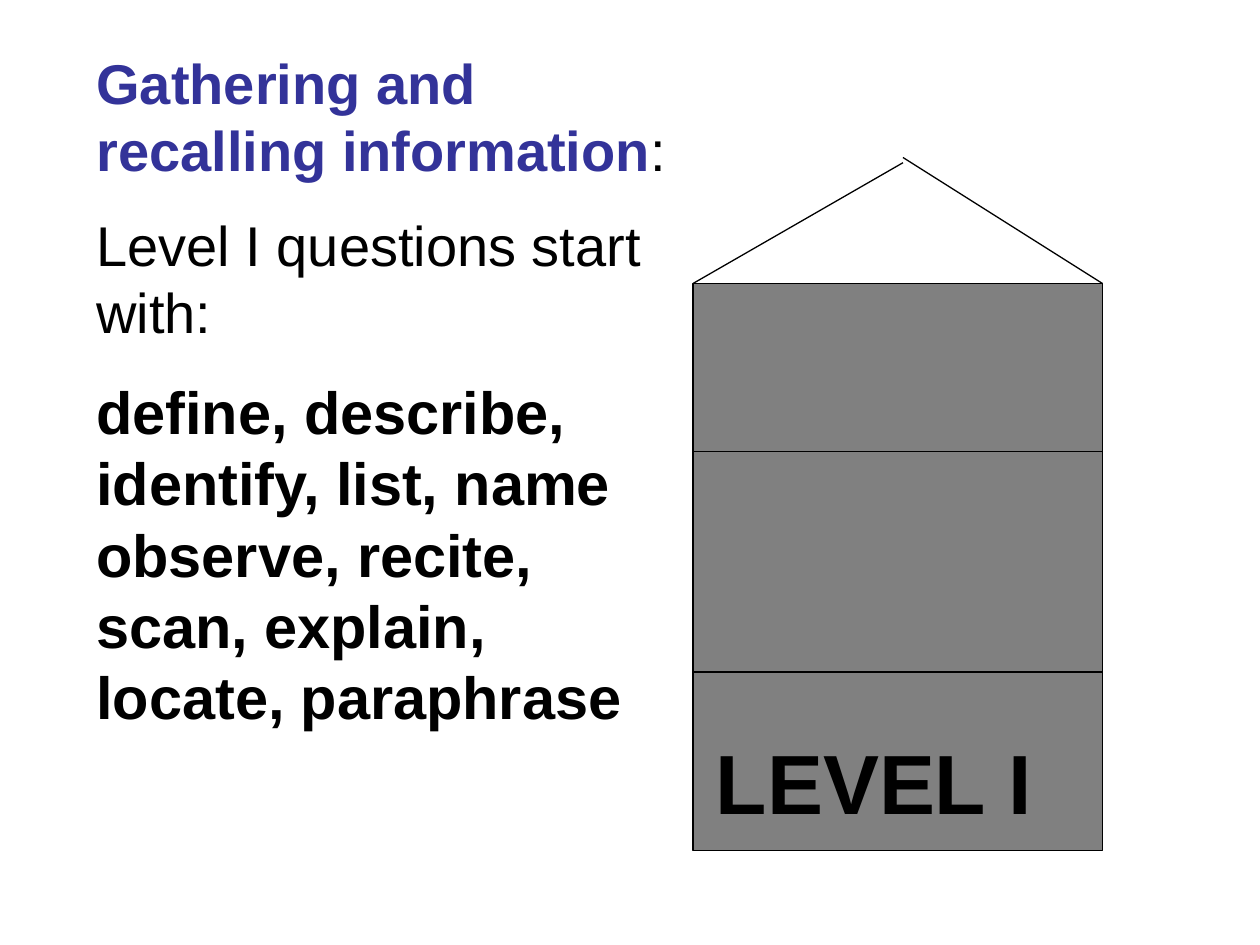
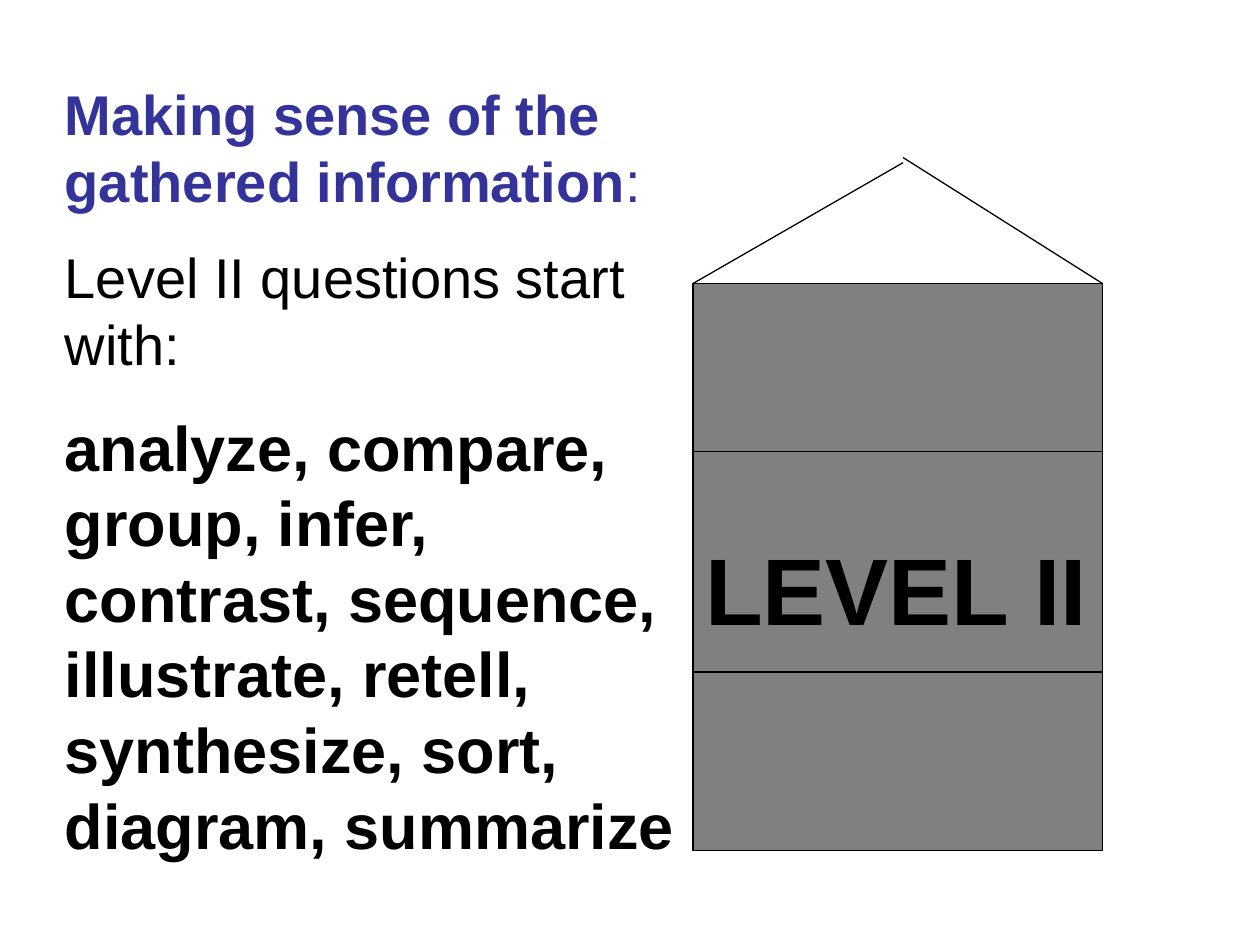
from pptx import Presentation
from pptx.dml.color import RGBColor
from pptx.enum.shapes import MSO_CONNECTOR, MSO_SHAPE
from pptx.enum.text import MSO_AUTO_SIZE
from pptx.util import Pt
from lxml.etree import SubElement
from pptx.oxml.ns import qn

BLACK = RGBColor(0x00, 0x00, 0x00)
GRAY = RGBColor(0x80, 0x80, 0x80)
INDIGO = RGBColor(0x33, 0x33, 0x99)

FONT = "Arial"
LINE_WIDTH = 0.75
BODY_SIZE = 32
HOUSE_BOX = (396, 162, 234, 324)  # left, top, width, height


def add_line(slide, start, end):
    line = slide.shapes.add_connector(
        MSO_CONNECTOR.STRAIGHT, *(Pt(v) for v in (*start, *end)))
    line.line.color.rgb = BLACK
    line.line.width = Pt(LINE_WIDTH)
    SubElement(line._element.spPr, qn("a:effectLst"))


def add_text(slide, box, paragraphs):
    """Each paragraph is a list of (text, size, color, bold) runs."""
    frame = slide.shapes.add_textbox(*(Pt(v) for v in box)).text_frame
    frame.word_wrap = True
    frame.auto_size = MSO_AUTO_SIZE.SHAPE_TO_FIT_TEXT
    for i, runs in enumerate(paragraphs):
        paragraph = frame.add_paragraph() if i else frame.paragraphs[0]
        paragraph.space_before = Pt(runs[0][1] / 2)
        for text, size, color, bold in runs:
            run = paragraph.add_run()
            run.text = text
            run.font.name = FONT
            run.font.size = Pt(size)
            run.font.color.rgb = color
            run.font.bold = bold


def add_house(slide, box, label, label_size, label_offset, label_extent):
    left, top, width, height = box
    right = left + width

    # Walls
    walls = slide.shapes.add_shape(MSO_SHAPE.RECTANGLE, *(Pt(v) for v in box))
    walls.shadow.inherit = False
    walls.fill.solid()
    walls.fill.fore_color.rgb = GRAY
    walls.line.color.rgb = BLACK
    walls.line.width = Pt(LINE_WIDTH)

    # Floors between the three levels
    for drop in (222, 96):
        add_line(slide, (left, top + drop), (right, top + drop))

    # Level label
    dx, dy = label_offset
    add_text(slide, (left + dx, top + dy, *label_extent),
             [[(label, label_size, BLACK, True)]])

    # Roof
    ridge = left + 120
    add_line(slide, (left, top), (ridge, top - 69))
    add_line(slide, (ridge, top - 72), (right, top))


def add_questions(slide, box, heading, colon_color, level, verbs, verb_size):
    add_text(slide, box, [
        [(heading, BODY_SIZE, INDIGO, True),
         (":", BODY_SIZE, colon_color, False)],
        [(f"Level {level} questions start with:", BODY_SIZE, BLACK, False)],
        [(verbs, verb_size, BLACK, True)],
    ])


def main():
    deck = Presentation()
    deck.slide_width, deck.slide_height = Pt(720), Pt(540)
    blank = deck.slide_layouts[6]

    # Level I
    gathering = deck.slides.add_slide(blank)
    add_house(gathering, HOUSE_BOX, "LEVEL I", 48, (6, 252), (234, 64.8))
    add_questions(
        gathering, (48, 24, 342, 408),
        "Gathering and recalling information", BLACK, "I",
        "define, describe, identify, list, name observe, recite, scan, "
        "explain, locate, paraphrase", 34)

    # Level II
    making_sense = deck.slides.add_slide(blank)
    add_house(making_sense, HOUSE_BOX, "LEVEL II", 54, (0, 138), (246, 72))
    add_questions(
        making_sense, (30, 42, 366, 461),
        "Making sense of the gathered information", INDIGO, "II",
        "analyze, compare, group, infer, contrast, sequence, illustrate, "
        "retell, synthesize, sort, diagram, summarize", 36)

    deck.save("out.pptx")


if __name__ == "__main__":
    main()
